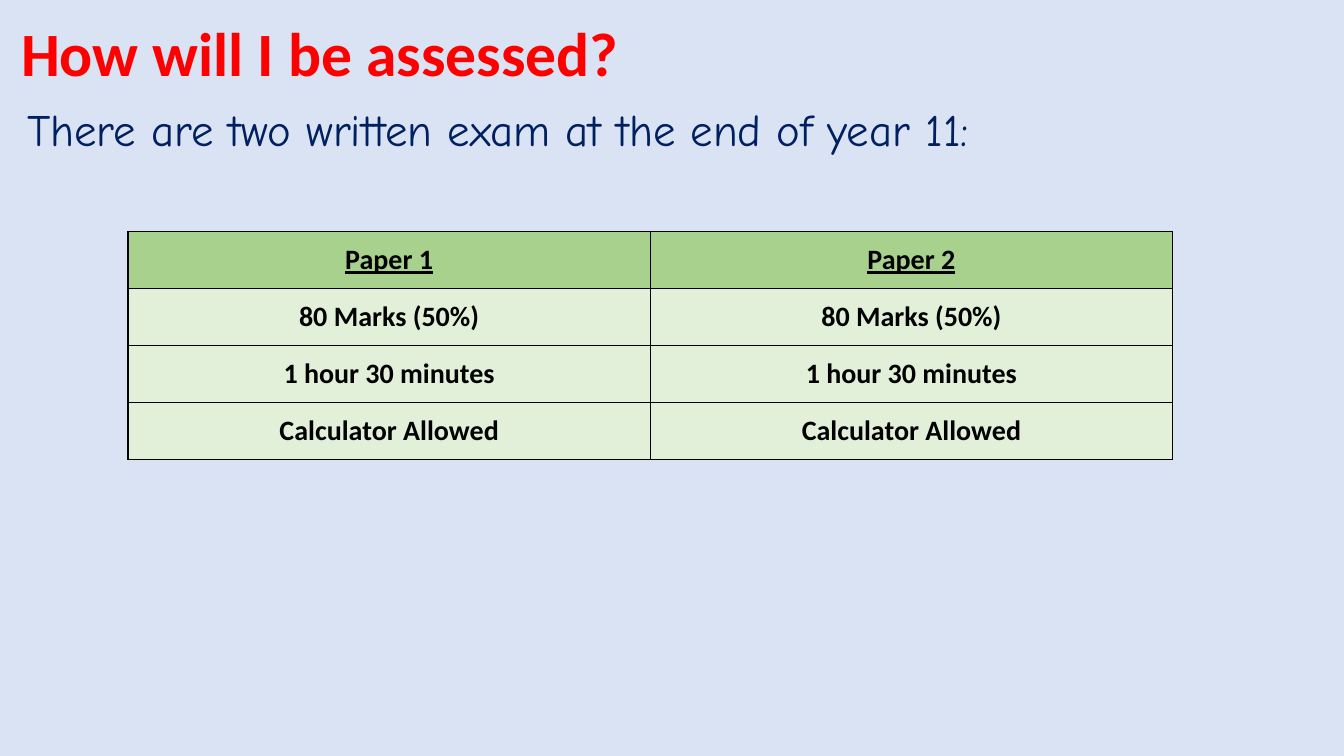
from pptx import Presentation
from pptx.dml.color import RGBColor
from pptx.enum.text import MSO_ANCHOR, MSO_AUTO_SIZE, PP_ALIGN
from pptx.oxml import parse_xml
from pptx.oxml.ns import nsdecls
from pptx.util import Inches, Pt

LEFT, CENTER = PP_ALIGN.LEFT, PP_ALIGN.CENTER
MIDDLE = MSO_ANCHOR.MIDDLE
NO_FIT, GROW = MSO_AUTO_SIZE.NONE, MSO_AUTO_SIZE.SHAPE_TO_FIT_TEXT
TITLE_ONLY = 5
COLORS = {
    "background": "DAE3F3",
    "title": "FF0000",
    "intro": "002060",
    "ink": "000000",
    "header": "A9D18E",
    "body": "E2F0D9",
}
PAPERS = ["Paper 1", "Paper 2"]
DETAILS = ["80 Marks (50%)", "1 hour 30 minutes", "Calculator Allowed"]
COLUMN_WIDTH, ROW_HEIGHT = Inches(5.18), Inches(0.56)


def style(para, font_name, size, color, bold=False, align=LEFT):
    para.alignment = align
    para.font.name = font_name
    para.font.size = Pt(size)
    para.font.bold = bold
    para.font.color.rgb = RGBColor.from_string(COLORS[color])


def add_borders(cell):
    properties = cell._tc.get_or_add_tcPr()
    for position, side in enumerate(("lnL", "lnR", "lnT", "lnB")):
        properties.insert(position, parse_xml(
            f'<a:{side} {nsdecls("a")} w="{Pt(1)}"><a:solidFill>'
            f'<a:srgbClr val="{COLORS["ink"]}"/></a:solidFill></a:{side}>'))


deck = Presentation()
deck.slide_width, deck.slide_height = Inches(13.33), Inches(7.5)
page = deck.slides.add_slide(deck.slide_layouts[TITLE_ONLY])
page.background.fill.solid()
page.background.fill.fore_color.rgb = RGBColor.from_string(COLORS["background"])

# Title
title = page.shapes.title
title.left, title.top = Inches(0.11), Inches(-0.07)
title.width, title.height = Inches(11.5), Inches(1.27)
title.text_frame.text = "How will I be assessed?"
title.text_frame.auto_size = NO_FIT
title.text_frame.vertical_anchor = MIDDLE
title_para = title.text_frame.paragraphs[0]
title_para.line_spacing = 0.9
style(title_para, "Calibri", 44, "title", bold=True)

# Introduction
intro = page.shapes.add_textbox(Inches(0.17), Inches(0.96), Inches(12.24), Inches(0.64))
intro.text_frame.word_wrap = True
intro.text_frame.auto_size = GROW
intro.text_frame.text = "There are two written exam at the end of year 11:"
style(intro.text_frame.paragraphs[0], "Comic Neue", 32, "intro")

# Exam table: both papers share the same details
rows = [PAPERS] + [[detail] * len(PAPERS) for detail in DETAILS]
table = page.shapes.add_table(
    len(rows), len(PAPERS), Inches(1.27), Inches(2.3),
    COLUMN_WIDTH * len(PAPERS), Inches(2.26)).table
for column in table.columns:
    column.width = COLUMN_WIDTH
for row_index, texts in enumerate(rows):
    is_header = row_index == 0
    for column_index, text in enumerate(texts):
        cell = table.cell(row_index, column_index)
        cell.text = text
        cell.vertical_anchor = MIDDLE
        cell.fill.solid()
        cell.fill.fore_color.rgb = RGBColor.from_string(
            COLORS["header" if is_header else "body"])
        add_borders(cell)
        para = cell.text_frame.paragraphs[0]
        style(para, "Calibri", 20, "ink", bold=True, align=CENTER)
        para.font.underline = is_header

deck.save("out.pptx")
